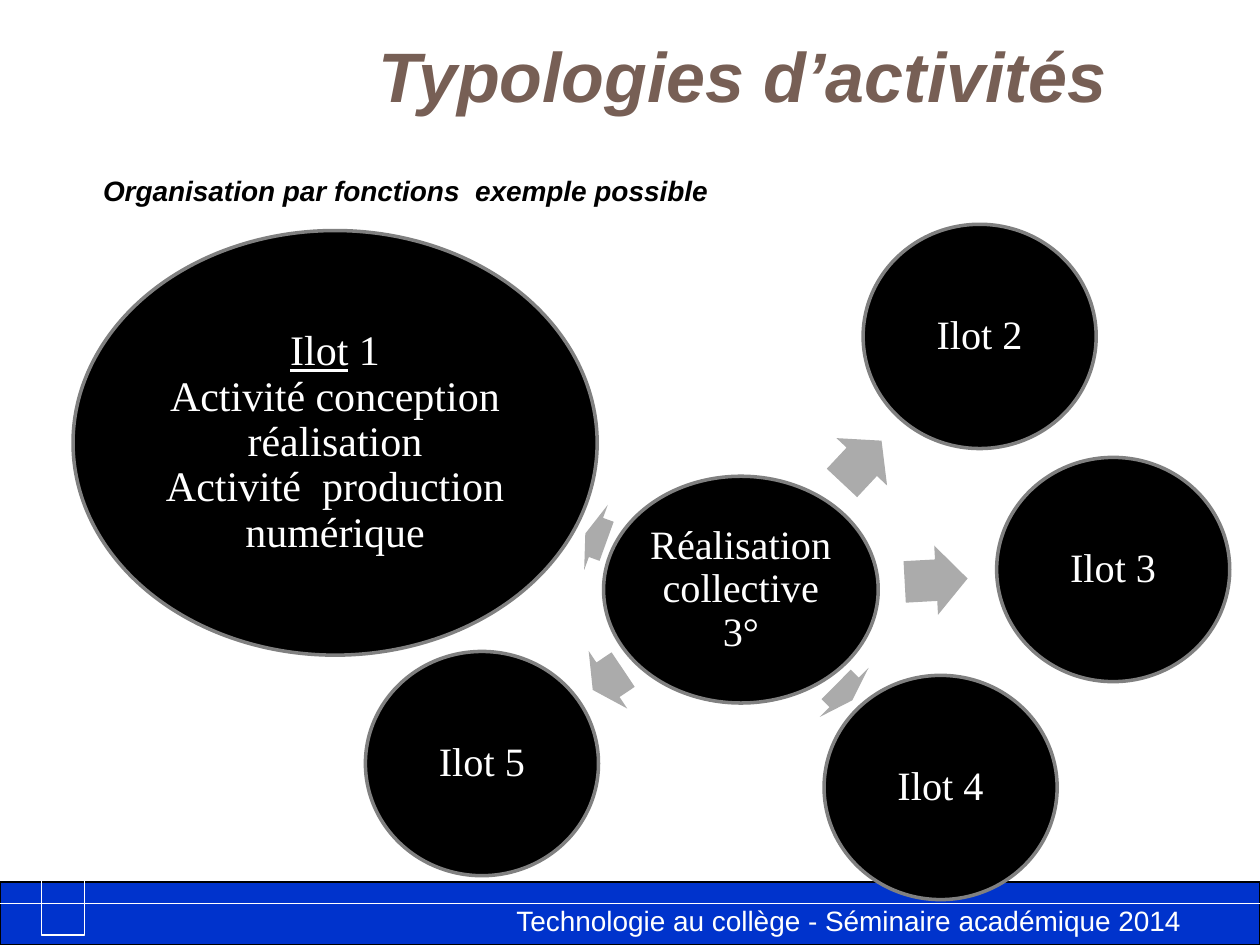
from lxml import etree
from pptx import Presentation
from pptx import util as u
from pptx.dml.color import RGBColor
from pptx.enum import shapes, text
from pptx.oxml import ns

COLORS = {"bar": "0033CC", "white": "FFFFFF", "black": "000000",
          "rim": "808080", "arrow": "ABABAB", "title": "775F55"}
SERIF = "Times New Roman"

# Satellite: box, text lines, text size, arrow box, arrow rotation
ISLANDS = [
    ((0.58, 1.83, 4.16, 3.37),
     ["Ilot 1", "Activité conception réalisation", "Activité  production numérique"],
     24, (4.64, 3.99, 0.18, 0.55), 199.9),
    ((7.91, 3.63, 1.85, 1.78), ["Ilot 3"], 23, (7.18, 4.33, 0.5, 0.55), 356.9),
    ((6.54, 5.36, 1.85, 1.78), ["Ilot 4"], 23, (6.61, 5.22, 0.18, 0.55), 44.8),
    ((2.9, 5.17, 1.85, 1.78), ["Ilot 5"], 23, (4.68, 5.12, 0.29, 0.55), 146.2),
    ((6.85, 1.78, 1.85, 1.78), ["Ilot 2"], 23, (6.61, 3.39, 0.46, 0.55), 313.1),
]


def color(name):
    return RGBColor.from_string(COLORS[name])


def inches(box):
    return [u.Inches(length) for length in box]


def style_font(font, size, face, shade, bold=False):
    font.size, font.name = u.Pt(size), face
    font.color.rgb = color(shade)
    font.bold = font.italic = bold


def add_shape(page, kind, box, fill, line=None, width=0.75):
    shape = page.shapes.add_shape(kind, *inches(box))
    shape.shadow.inherit = False
    shape.fill.solid()
    shape.fill.fore_color.rgb = color(fill)
    if line:
        shape.line.color.rgb = color(line)
        shape.line.width = u.Pt(width)
    else:
        shape.line.fill.background()
    return shape


def add_label(page, box, wording, size, shade, bold=False, wrap=True):
    label = page.shapes.add_textbox(*inches(box))
    frame = label.text_frame
    frame.word_wrap = wrap
    frame.text = wording
    style_font(frame.paragraphs[0].runs[0].font, size, "Arial", shade, bold)
    return label


def add_footer(page, box):
    left, top, width, height = box
    add_shape(page, shapes.MSO_SHAPE.RECTANGLE, box, "bar", "black")
    # White rule across the bar
    rule = page.shapes.add_connector(
        shapes.MSO_CONNECTOR.STRAIGHT,
        *inches((left, top + 0.17, left + width, top + 0.17)))
    rule.line.color.rgb = color("white")
    rule.line.width = u.Pt(0.75)
    etree.SubElement(rule._element.spPr, ns.qn("a:effectLst"))
    add_label(page, (left + 4, top + 0.12, 6, 0.37),
              "Technologie au collège - Séminaire académique 2014", 16, "white")
    # White hook at the left
    points = [inches(point) for point in
              [(0.67, 0.08), (0.67, 7.42), (0.33, 7.42), (0.33, 6.65)]]
    builder = page.shapes.build_freeform(*points[0])
    builder.add_line_segments(points[1:], close=False)
    hook = builder.convert_to_shape()
    hook.shadow.inherit = False
    hook.fill.background()
    hook.line.color.rgb = color("white")
    hook.line.width = u.Pt(0.75)


def add_bubble(page, box, lines, size):
    bubble = add_shape(page, shapes.MSO_SHAPE.OVAL, box, "black", "rim", 2)
    frame = bubble.text_frame
    frame.word_wrap = True
    frame.vertical_anchor = text.MSO_ANCHOR.MIDDLE
    frame.margin_left = frame.margin_right = u.Inches(0.03)
    frame.margin_top = frame.margin_bottom = u.Inches(0.03)
    para = frame.paragraphs[0]
    para.alignment = text.PP_ALIGN.CENTER
    para.line_spacing = 0.9
    for index, line in enumerate(lines):
        if index:
            para.add_line_break()
        # The heading word is underlined when details follow it
        underlined = len(lines) > 1 and index == 0
        word, gap, rest = line.partition(" ")
        for part in ([word, gap + rest] if underlined else [line]):
            span = para.add_run()
            span.text = part
            style_font(span.font, size, SERIF, "white")
            span.font.underline = underlined and part == word


def add_arrow(page, box, rotation):
    arrow = add_shape(page, shapes.MSO_SHAPE.RIGHT_ARROW, box, "arrow")
    arrow.adjustments[0], arrow.adjustments[1] = 0.6, 0.5
    arrow.rotation = rotation


def add_diagram(page, hub_box):
    add_bubble(page, hub_box, ["Réalisation collective 3°"], 23)
    for box, lines, size, arrow_box, rotation in ISLANDS:
        add_arrow(page, arrow_box, rotation)
        add_bubble(page, box, lines, size)


def add_title(page, box):
    title = add_label(page, box, "Typologies d’activités", 40, "title", bold=True)
    title.text_frame.vertical_anchor = text.MSO_ANCHOR.MIDDLE
    title.text_frame.paragraphs[0].alignment = text.PP_ALIGN.CENTER


def main():
    deck = Presentation()
    deck.slide_width, deck.slide_height = u.Inches(10), u.Inches(7.5)
    page = deck.slides.add_slide(deck.slide_layouts[6])
    add_footer(page, (0, 7, 10, 0.5))
    add_label(page, (0.72, 1.33, 5.07, 0.37),
              "Organisation par fonctions  exemple possible", 16, "black",
              bold=True, wrap=False)
    add_diagram(page, (4.79, 3.78, 2.18, 1.8))
    add_title(page, (2.01, 0.21, 7.76, 0.77))
    deck.save("out.pptx")


if __name__ == "__main__":
    main()
